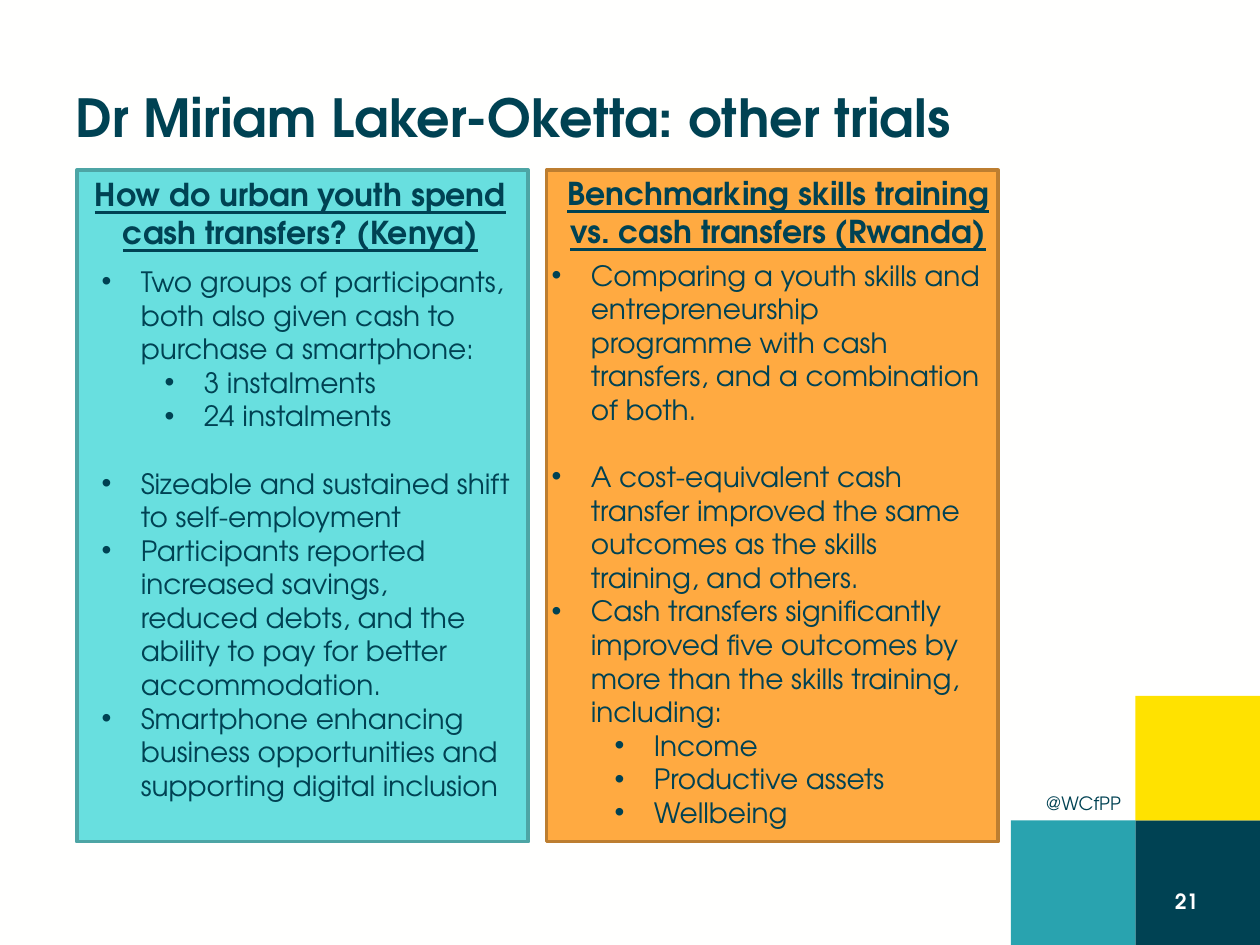
"""Build the slide on two other cash transfer trials, in Kenya and Rwanda."""
from lxml import etree
from pptx import Presentation
from pptx.dml.color import RGBColor
from pptx.enum.shapes import MSO_SHAPE
from pptx.enum.text import MSO_ANCHOR, PP_ALIGN
from pptx.oxml.ns import qn
from pptx.util import Cm, Pt

RECTANGLE = MSO_SHAPE.RECTANGLE
TOP, MIDDLE = MSO_ANCHOR.TOP, MSO_ANCHOR.MIDDLE
LEFT, CENTER, RIGHT = PP_ALIGN.LEFT, PP_ALIGN.CENTER, PP_ALIGN.RIGHT

NAVY, WHITE = "004253", "FFFFFF"
TYPEFACE = "TeX Gyre Adventor"
HANGING = Cm(0.79)
LEVEL_INDENTS = [Cm(0.79), Cm(2.06)]
GROUP_GAP = Pt(19.2)


def color(hex_value):
    return RGBColor.from_string(hex_value)


def add_text(area, paragraphs, format_values, anchor=TOP, align=LEFT, ink=NAVY):
    frame = slide.shapes.add_textbox(*map(Cm, area)).text_frame
    frame.word_wrap = True
    frame.vertical_anchor = anchor
    for index, (words, level, gap) in enumerate(paragraphs):
        paragraph = frame.paragraphs[0] if index == 0 else frame.add_paragraph()
        paragraph.text = words
        paragraph.alignment = align
        if gap:
            paragraph.space_before = gap
        if level is not None:
            paragraph.level = level
            properties = paragraph._p.get_or_add_pPr()
            properties.set("marL", str(LEVEL_INDENTS[level]))
            properties.set("indent", str(-HANGING))
            etree.SubElement(properties, qn("a:buFont"), typeface="Arial")
            etree.SubElement(properties, qn("a:buChar"), char="•")
        font = paragraph.runs[0].font
        for attribute, value in {"name": TYPEFACE, **format_values}.items():
            setattr(font, attribute, value)
        font.color.rgb = color(ink)


presentation = Presentation()
presentation.slide_width, presentation.slide_height = Cm(25.4), Cm(19.05)
slide = presentation.slides.add_slide(presentation.slide_layouts[6])
slide.background.fill.solid()
slide.background.fill.fore_color.rgb = color("FFFFFE")

square = 2.51
right_column, bottom_row = 25.4 - square, 19.05 - square
panel_top, panel_width, panel_height = 3.43, 9.1, 13.54
blocks = [
    (right_column, bottom_row, square, square, NAVY, None),
    (right_column, bottom_row - square, square, square, "FFE200", None),
    (right_column - square, bottom_row, square, square, "29A3AF", None),
    (1.55, panel_top, panel_width, panel_height, "68DFDF", "4DA5A5"),
    (11.02, panel_top, panel_width, panel_height, "FFAA41", "BD7E30"),
]
for *area, fill, outline in blocks:
    block = slide.shapes.add_shape(RECTANGLE, *map(Cm, area))
    block.shadow.inherit = False
    block.fill.solid()
    block.fill.fore_color.rgb = color(fill)
    if outline:
        block.line.color.rgb = color(outline)
        block.line.width = Pt(2)
    else:
        block.line.fill.background()

kenya_findings = [
    ("Two groups of participants, both also given cash to purchase a smartphone:", 0, None),
    ("3 instalments", 1, None),
    ("24 instalments", 1, None),
    ("Sizeable and sustained shift to self-employment", 0, GROUP_GAP),
    ("Participants reported increased savings, reduced debts, and the ability to pay "
     "for better accommodation.", 0, None),
    ("Smartphone enhancing business opportunities and supporting digital inclusion", 0, None),
]
rwanda_findings = [
    ("Comparing a youth skills and entrepreneurship programme with cash transfers, "
     "and a combination of both.", 0, None),
    ("A cost-equivalent cash transfer improved the same outcomes as the skills "
     "training, and others.", 0, GROUP_GAP),
    ("Cash transfers significantly improved five outcomes by more than the skills "
     "training, including:", 0, None),
    ("Income", 1, None),
    ("Productive assets", 1, None),
    ("Wellbeing", 1, None),
]
trials = [
    ("How do urban youth spend cash transfers? (Kenya)", (1.14, 3.4, 9.83, 1.8),
     kenya_findings, (1.8, 5.21, 8.76, 11.2)),
    ("Benchmarking skills training vs. cash transfers (Rwanda)", (10.77, 3.38, 9.83, 1.8),
     rwanda_findings, (10.87, 5.08, 9.25, 11.89)),
]

add_text((1.27, 0.76, 22.86, 3.18), [("Dr Miriam Laker-Oketta: other trials", None, None)],
         {"size": Pt(30), "bold": True}, MIDDLE)
for heading, heading_area, findings, findings_area in trials:
    add_text(heading_area, [(heading, None, None)],
             {"size": Pt(18), "bold": True, "underline": True}, align=CENTER)
    add_text(findings_area, findings, {"size": Pt(16)})
add_text((20.83, 15.85, 2.06, 0.74), [("@WCfPP", None, None)], {"size": Pt(10.5)})
add_text((18.49, 17.65, 5.92, 1.02), [("21", None, None)],
         {"size": Pt(12), "bold": True}, MIDDLE, RIGHT, WHITE)

presentation.save("out.pptx")
